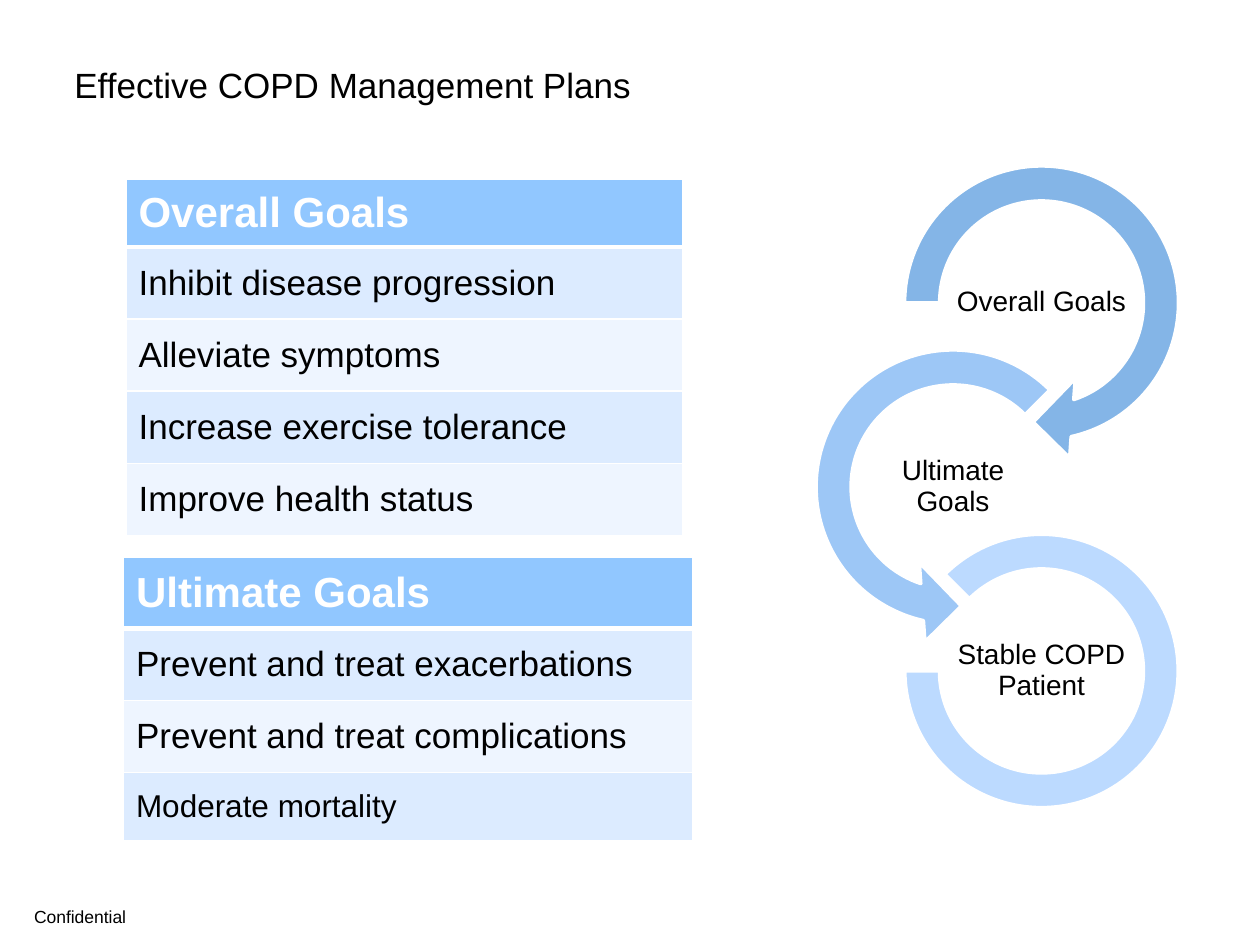
from dataclasses import dataclass

from lxml import etree
from pptx import Presentation
from pptx.dml.color import RGBColor
from pptx.enum.shapes import MSO_SHAPE
from pptx.enum.text import MSO_ANCHOR, MSO_AUTO_SIZE, PP_ALIGN
from pptx.oxml.ns import qn
from pptx.util import Inches, Pt

TOP, MIDDLE, BOTTOM = MSO_ANCHOR.TOP, MSO_ANCHOR.MIDDLE, MSO_ANCHOR.BOTTOM
LEFT, CENTER = PP_ALIGN.LEFT, PP_ALIGN.CENTER
NO_AUTOFIT = MSO_AUTO_SIZE.NONE
RIGHT_ARROW = MSO_SHAPE.CIRCULAR_ARROW
LEFT_ARROW = MSO_SHAPE.LEFT_CIRCULAR_ARROW
OPEN_RING = MSO_SHAPE.BLOCK_ARC
TITLE_ONLY = 5
CELL = Inches(0.1)  # the slide is a grid of 100 columns by 75 rows


@dataclass(frozen=True)
class Theme:
    font: str = "Arial"
    ink: str = "000000"
    paper: str = "FFFFFF"
    header: str = "91C7FF"
    bands: tuple = ("DCEBFF", "EEF5FF")
    rings: tuple = ("84B5E7", "9DC7F6", "BCDAFF")
    title_size: int = 20
    header_size: int = 24
    goal_size: int = 20
    small_goal_size: int = 18
    label_size: int = 16
    footer_size: int = 10


THEME = Theme()


@dataclass(frozen=True)
class Box:
    """A rectangle in columns and rows of the slide grid."""
    left: float
    top: float
    width: float
    height: float

    def emu(self):
        return [round(v * CELL) for v in (self.left, self.top, self.width, self.height)]


def centred_box(x, y, width, height):
    return Box(x - width / 2, y - height / 2, width, height)


def write(frame, text, size, color=THEME.ink, bold=False, align=LEFT, spacing=None):
    frame.text = text
    paragraph = frame.paragraphs[0]
    paragraph.alignment = align
    if spacing:
        paragraph.line_spacing = spacing
    font = paragraph.runs[0].font
    font.name, font.size, font.bold = THEME.font, Pt(size), bold
    font.color.rgb = RGBColor.from_string(color)


def set_frame(frame, anchor, inset=0):
    frame.word_wrap = True
    frame.auto_size = NO_AUTOFIT
    frame.vertical_anchor = anchor
    frame.margin_left = frame.margin_right = Inches(inset)
    frame.margin_top = frame.margin_bottom = Inches(inset)


def add_title(slide, box, text):
    title = slide.shapes.title
    title.left, title.top, title.width, title.height = box.emu()
    set_frame(title.text_frame, TOP)
    write(title.text_frame, text, THEME.title_size, spacing=1.05)


def add_footer(slide, box, text):
    frame = slide.shapes.add_textbox(*box.emu()).text_frame
    set_frame(frame, BOTTOM)
    write(frame, text, THEME.footer_size)


def set_borders(cell, widths):
    properties = cell._tc.get_or_add_tcPr()
    for side, width in widths.items():
        line = etree.SubElement(properties, qn(f"a:ln{side}"), w=str(Pt(width)))
        fill = etree.SubElement(line, qn("a:solidFill"))
        etree.SubElement(fill, qn("a:srgbClr"), val=THEME.paper)


def add_goal_table(slide, box, heading, goals, short_row, short_height=5.4, last_size=THEME.goal_size):
    """One row is short; the others share the remaining height."""
    row_count = len(goals) + 1
    table = slide.shapes.add_table(row_count, 1, *box.emu()).table
    table.horz_banding = False
    full_height = (box.height - short_height) / (row_count - 1)
    for index, text in enumerate([heading, *goals]):
        height = short_height if index == short_row else full_height
        table.rows[index].height = round(height * CELL)
        cell = table.cell(index, 0)
        cell.vertical_anchor = MIDDLE
        is_header = index == 0
        set_borders(cell, {"L": 1, "R": 1,
                           "T": 3 if index == 1 else 1,
                           "B": 3 if is_header else 1})
        cell.fill.solid()
        if is_header:
            color = THEME.header
            write(cell.text_frame, text, THEME.header_size, THEME.paper, bold=True)
        else:
            color = THEME.bands[(index - 1) % 2]
            size = last_size if index == row_count - 1 else THEME.goal_size
            write(cell.text_frame, text, size)
        cell.fill.fore_color.rgb = RGBColor.from_string(color)


def add_ring(slide, box, preset, adjustments, color):
    ring = slide.shapes.add_shape(preset, *box.emu())
    ring.shadow.inherit = False
    for index, value in enumerate(adjustments):
        ring.adjustments[index] = value
    ring.fill.solid()
    ring.fill.fore_color.rgb = RGBColor.from_string(color)
    ring.line.color.rgb = RGBColor.from_string(THEME.paper)
    ring.line.width = Pt(2)


def add_goal_cycle(slide, box, labels):
    """Rings step down the box, alternating between its right and left side."""
    unit = box.width / 4.6
    arrow_size, arc_size, pitch = 3.6 * unit, 3.09 * unit, 2.08 * unit
    rings = [
        (RIGHT_ARROW, arrow_size, (0.11, 11.42, 45, 108, 0.125)),
        (LEFT_ARROW, arrow_size, (0.11, 11.42, 63, 189, 0.125)),
        (OPEN_RING, arc_size, (135, 108, 0.127)),
    ]
    for index, (label, (preset, size, adjustments)) in enumerate(zip(labels, rings)):
        x = box.left + arrow_size / 2 + (unit if index % 2 == 0 else 0)
        y = box.top + arrow_size / 2 + index * pitch
        add_ring(slide, centred_box(x, y, size, size), preset, adjustments, THEME.rings[index])
        caption = centred_box(x, y, 2 * unit, unit)
        frame = slide.shapes.add_textbox(*caption.emu()).text_frame
        set_frame(frame, MIDDLE, inset=0.01)
        write(frame, label, THEME.label_size, align=CENTER, spacing=0.9)


def main():
    presentation = Presentation()
    presentation.slide_width, presentation.slide_height = 100 * CELL, 75 * CELL
    slide = presentation.slides.add_slide(presentation.slide_layouts[TITLE_ONLY])

    add_title(slide, Box(5.9, 4.9, 88.2, 11), "Effective COPD Management Plans")
    add_goal_table(slide, Box(10, 14.2, 44.2, 28.3), "Overall Goals", [
        "Inhibit disease progression",
        "Alleviate symptoms",
        "Increase exercise tolerance",
        "Improve health status",
    ], short_row=0)
    add_goal_table(slide, Box(9.8, 44.2, 45.2, 22.5), "Ultimate Goals", [
        "Prevent and treat exacerbations",
        "Prevent and treat complications",
        "Moderate mortality",
    ], short_row=3, last_size=THEME.small_goal_size)
    add_goal_cycle(slide, Box(63, 11.4, 32.3, 52.5),
                   ["Overall Goals", "Ultimate Goals", "Stable COPD Patient"])
    add_footer(slide, Box(2.7, 71.9, 20.1, 1.7), "Confidential")

    presentation.save("out.pptx")


if __name__ == "__main__":
    main()
